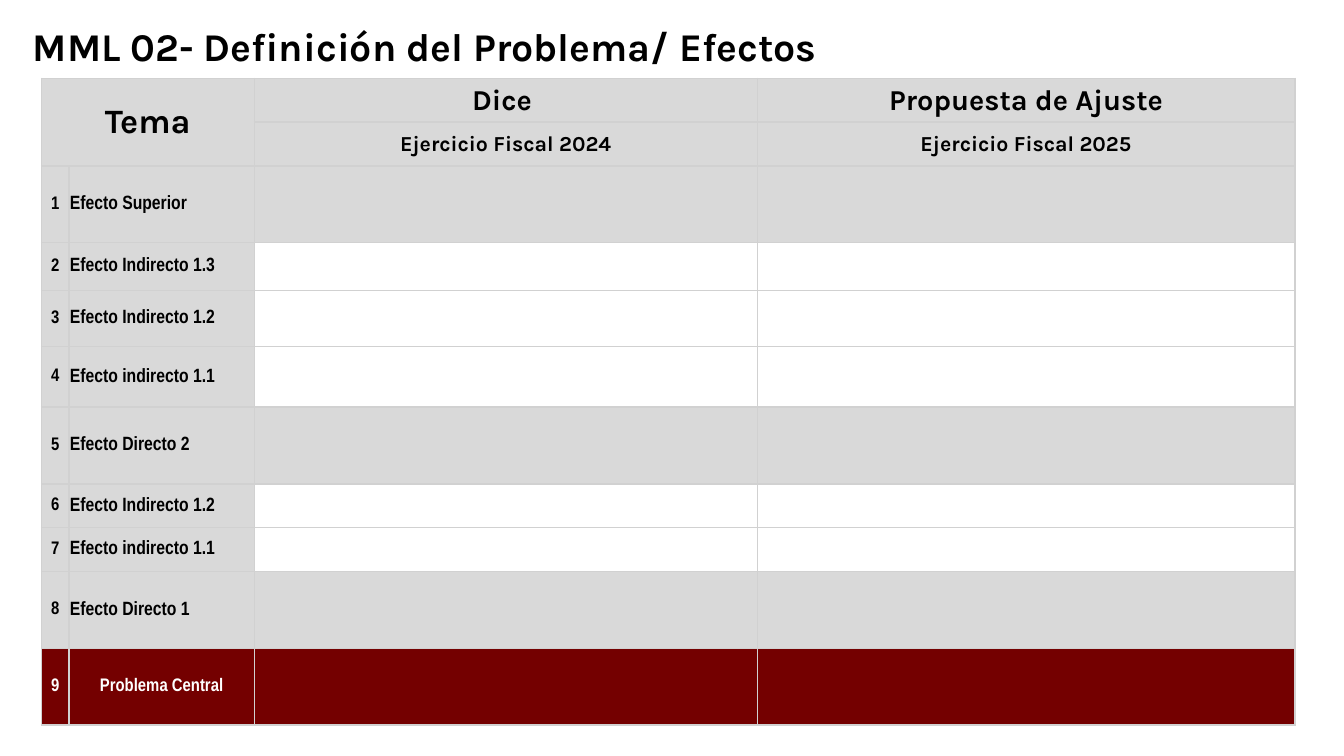
from lxml.etree import SubElement
from pptx import Presentation
from pptx.dml.color import RGBColor
from pptx.enum.text import MSO_ANCHOR as Anchor, PP_ALIGN as Align
from pptx.oxml.ns import qn
from pptx.util import Inches, Pt

COLORS = {"black": "000000", "white": "FFFFFF", "gray": "D9D9D9",
          "border": "D1D1D1", "maroon": "740000"}
COLUMNS = [0.36, 2.41, 6.55, 7]
HEADER_HEIGHT = 0.57
HEADERS = [("Dice ", "Ejercicio Fiscal 2024"),
           ("Propuesta de Ajuste", "Ejercicio Fiscal 2025")]
# label, row height, fill of the label cells, fill of the answer cells
EFFECTS = [
    ("Efecto Superior", 1, "gray", "gray"),
    ("Efecto Indirecto 1.3", 0.62, "gray", None),
    ("Efecto Indirecto 1.2", 0.73, "gray", None),
    ("Efecto indirecto 1.1", 0.79, "gray", None),
    ("Efecto Directo 2", 1, "gray", "gray"),
    ("Efecto Indirecto 1.2", 0.57, "gray", None),
    ("Efecto indirecto 1.1", 0.57, "gray", None),
    ("Efecto Directo 1", 1, "gray", "gray"),
    ("Problema Central", 1, "maroon", "maroon"),
]


def write(tf, text, size, font="Karla", color="black", align=Align.LEFT, spacing=None):
    p = tf.paragraphs[0]
    p.alignment = align
    if spacing:
        p.line_spacing = spacing
    r = p.add_run()
    r.text = text
    r.font.name = font
    r.font.size = Pt(size)
    r.font.bold = True
    r.font.color.rgb = RGBColor.from_string(COLORS[color])


class SlideBuilder:
    def __init__(self, slide):
        self.slide = slide

    def title(self, text, left, top, width, height):
        box = [Inches(v) for v in (left, top, width, height)]
        tf = self.slide.shapes.add_textbox(*box).text_frame
        tf.word_wrap = True
        tf.vertical_anchor = Anchor.MIDDLE
        write(tf, text, 36.8, spacing=0.9)

    def table(self, left, top, widths, heights):
        box = [Inches(v) for v in (left, top, sum(widths), sum(heights))]
        table = self.slide.shapes.add_table(len(heights), len(widths), *box).table
        table.first_row = table.horz_banding = False
        for column, width in zip(table.columns, widths):
            column.width = Inches(width)
        for row, height in zip(table.rows, heights):
            row.height = Inches(height)
        return table

    def cell(self, cell, fill=None, text=None, size=17, **style):
        cell.vertical_anchor = Anchor.MIDDLE
        cell.margin_left = cell.margin_right = cell.margin_top = Inches(0.01)
        cell.margin_bottom = 0
        self.borders(cell)
        if fill:
            cell.fill.solid()
            cell.fill.fore_color.rgb = RGBColor.from_string(COLORS[fill])
        else:
            cell.fill.background()
        if text:
            write(cell.text_frame, text, size, **style)

    def borders(self, cell):
        tc_pr = cell._tc.get_or_add_tcPr()
        for side in ("lnL", "lnR", "lnT", "lnB"):
            ln = SubElement(tc_pr, qn(f"a:{side}"), w=str(Pt(1.5)))
            fill = SubElement(ln, qn("a:solidFill"))
            SubElement(fill, qn("a:srgbClr"), val=COLORS["border"])


def main():
    prs = Presentation()
    prs.slide_width, prs.slide_height = Inches(17.5), Inches(9.84)
    s = SlideBuilder(prs.slides.add_slide(prs.slide_layouts[6]))
    s.title("MML 02- Definición del Problema/ Efectos", 0.33, 0.08, 15.09, 1.1)

    heights = [HEADER_HEIGHT] * 2 + [effect[1] for effect in EFFECTS]
    table = s.table(0.54, 1.02, COLUMNS, heights)

    table.cell(0, 0).merge(table.cell(1, 1))
    for row, size in enumerate((27, 20)):
        for col in range(2):
            topic = "Tema" if row == col == 0 else None
            s.cell(table.cell(row, col), "gray", topic, 32, align=Align.CENTER)
            s.cell(table.cell(row, col + 2), "gray", HEADERS[col][row], size,
                   align=Align.CENTER)

    for number, (label, _, label_fill, answer_fill) in enumerate(EFFECTS, 1):
        row = number + 1
        central = label_fill == "maroon"
        style = {"font": "Arial Narrow", "color": "white" if central else "black"}
        s.cell(table.cell(row, 0), label_fill, str(number), align=Align.CENTER, **style)
        s.cell(table.cell(row, 1), label_fill, label, 17 if central else 18,
               align=Align.CENTER if central else Align.LEFT, **style)
        for col in (2, 3):
            s.cell(table.cell(row, col), answer_fill)

    prs.save("out.pptx")


if __name__ == "__main__":
    main()
